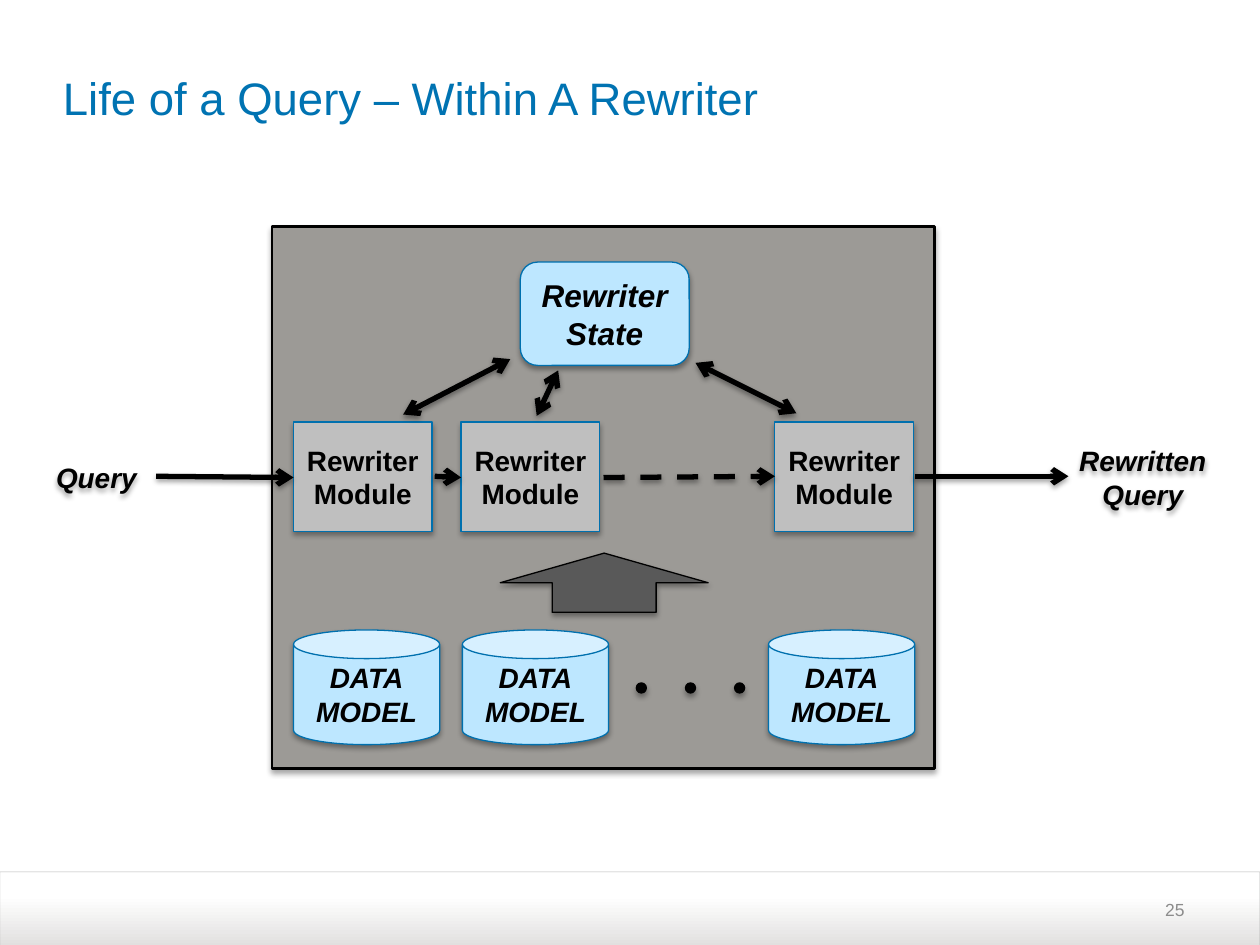
from lxml.etree import SubElement
from pptx import Presentation
from pptx.dml.color import RGBColor
from pptx.enum.dml import MSO_LINE
from pptx.enum.shapes import MSO_CONNECTOR, MSO_SHAPE
from pptx.enum.text import MSO_ANCHOR, PP_ALIGN
from pptx.oxml.ns import qn
from pptx.util import Inches, Pt

BLACK = RGBColor(0x00, 0x00, 0x00)
WHITE = RGBColor(0xFF, 0xFF, 0xFF)
TITLE = RGBColor(0x00, 0x73, 0xB2)
EDGE = RGBColor(0x00, 0x70, 0xAE)
SKY = RGBColor(0xBD, 0xE7, 0xFF)
PANEL = RGBColor(0x9C, 0x9A, 0x96)
SILVER = RGBColor(0xBF, 0xBF, 0xBF)
DARK = RGBColor(0x59, 0x59, 0x59)
NUMBER = RGBColor(0x8C, 0x8C, 0x8C)
RIM = RGBColor(0xA6, 0xA6, 0xA6)
MIST = RGBColor(0xE1, 0xE0, 0xDF)


def add_shade(shape, drop=1.8, alpha=35):
    """Give a shape or line a soft shadow straight below it."""
    effects = SubElement(shape._element.spPr, qn("a:effectLst"))
    outer = SubElement(effects, qn("a:outerShdw"), blurRad=str(Pt(3.1)),
                       dist=str(Pt(drop)), dir="5400000", rotWithShape="0")
    color = SubElement(outer, qn("a:srgbClr"), val=str(BLACK))
    SubElement(color, qn("a:alpha"), val=str(alpha * 1000))


def add_text(shape, text, size, color=BLACK, bold=False, italic=False,
             align=PP_ALIGN.CENTER, wrap=False):
    frame = shape.text_frame
    frame.word_wrap = wrap
    frame.vertical_anchor = MSO_ANCHOR.MIDDLE
    para = frame.paragraphs[0]
    para.alignment = align
    for i, line in enumerate(text.split("\n")):
        if i:
            para.add_line_break()
        run = para.add_run()
        run.text = line
        font = run.font
        font.name, font.size = "Arial", Pt(size)
        font.bold, font.italic = bold, italic
        font.color.rgb = color


def add_box(slide, kind, x, y, w, h, fill, edge=EDGE, width=0.75):
    shape = slide.shapes.add_shape(kind, Inches(x), Inches(y), Inches(w), Inches(h))
    shape.fill.solid()
    shape.fill.fore_color.rgb = fill
    shape.line.color.rgb = edge
    shape.line.width = Pt(width)
    add_shade(shape)
    return shape


def add_label(slide, x, y, w, h):
    return slide.shapes.add_textbox(Inches(x), Inches(y), Inches(w), Inches(h))


def add_arrow(slide, x1, y1, x2, y2, both=False, dash=False):
    link = slide.shapes.add_connector(MSO_CONNECTOR.STRAIGHT, Inches(x1), Inches(y1),
                                      Inches(x2), Inches(y2))
    link.line.color.rgb = BLACK
    link.line.width = Pt(3)
    if dash:
        link.line.dash_style = MSO_LINE.DASH
    ends = ["a:headEnd", "a:tailEnd"] if both else ["a:tailEnd"]
    for end in ends:
        SubElement(link.line._get_or_add_ln(), qn(end), type="arrow")
    add_shade(link, 1.6, 38)


def add_footer(slide):
    bar = slide.shapes.add_shape(MSO_SHAPE.ROUND_2_SAME_RECTANGLE, Inches(0),
                                 Inches(6.92), Inches(10), Inches(0.59))
    bar.adjustments[0] = 0
    bar.shadow.inherit = False
    bar.fill.gradient()
    bar.fill.gradient_angle = 90
    for stop, place, color in zip(bar.fill.gradient_stops, (0, 0.68), (MIST, WHITE)):
        stop.position = place
        stop.color.rgb = color
    bar.line.color.rgb = RIM
    bar.line.width = Pt(0.25)
    tint = bar.line._get_or_add_ln().find(".//" + qn("a:srgbClr"))
    SubElement(tint, qn("a:alpha"), val="79000")
    add_text(add_label(slide, 7.17, 7.02, 2.33, 0.4), "25", 10, NUMBER,
             align=PP_ALIGN.RIGHT, wrap=True)


def add_title(slide):
    title = add_label(slide, 0.5, 0.22, 9, 1.1)
    title.text_frame.margin_left = title.text_frame.margin_right = 0
    add_text(title, "Life of a Query – Within A Rewriter", 26, TITLE,
             align=PP_ALIGN.LEFT, wrap=True)


def main():
    prs = Presentation()
    prs.slide_width, prs.slide_height = Inches(10), Inches(7.5)
    slide = prs.slides.add_slide(prs.slide_layouts[6])
    add_footer(slide)
    add_title(slide)

    # Rewriter panel and its shared state
    add_box(slide, MSO_SHAPE.RECTANGLE, 2.16, 1.8, 5.26, 4.3, PANEL, BLACK, 1.5)
    state = add_box(slide, MSO_SHAPE.ROUNDED_RECTANGLE, 4.13, 2.08, 1.34, 0.82, SKY)
    add_text(state, "Rewriter\nState", 18, bold=True, italic=True)

    # Data models, with dots for the ones between
    for x in (2.33, 3.67, 6.1):
        can = add_box(slide, MSO_SHAPE.CAN, x, 5, 1.16, 0.91, SKY)
        add_text(can, "DATA\nMODEL", 16, bold=True, italic=True)
    for i in range(3):
        add_box(slide, MSO_SHAPE.OVAL, 5.05 + 0.39 * i, 5.42, 0.08, 0.08, BLACK, BLACK)
    add_box(slide, MSO_SHAPE.UP_ARROW, 3.97, 4.39, 1.65, 0.47, DARK, BLACK)

    # Rewriter modules
    for x in (2.33, 3.66, 6.15):
        module = add_box(slide, MSO_SHAPE.RECTANGLE, x, 3.35, 1.1, 0.87, SILVER)
        add_text(module, "Rewriter\nModule", 16, bold=True)

    # Query going in and coming out
    for text, x, w in (("Query", 0.28, 0.97), ("Rewritten\nQuery", 8.46, 1.22)):
        label = add_label(slide, x, 3.37, w, 0.84)
        add_text(label, text, 16, bold=True, italic=True)
        add_shade(label)

    # Flow from left to right
    add_arrow(slide, 1.24, 3.78, 2.33, 3.79)
    add_arrow(slide, 3.45, 3.78, 3.66, 3.79)
    add_arrow(slide, 4.79, 3.79, 6.15, 3.78, dash=True)
    add_arrow(slide, 7.26, 3.78, 8.48, 3.78)

    # Links between the modules and the state
    for ends in ((3.2, 3.29, 4.05, 2.85), (4.26, 3.3, 4.43, 2.94),
                 (6.32, 3.28, 5.52, 2.88)):
        add_arrow(slide, *ends, both=True)

    prs.save("out.pptx")


if __name__ == "__main__":
    main()
